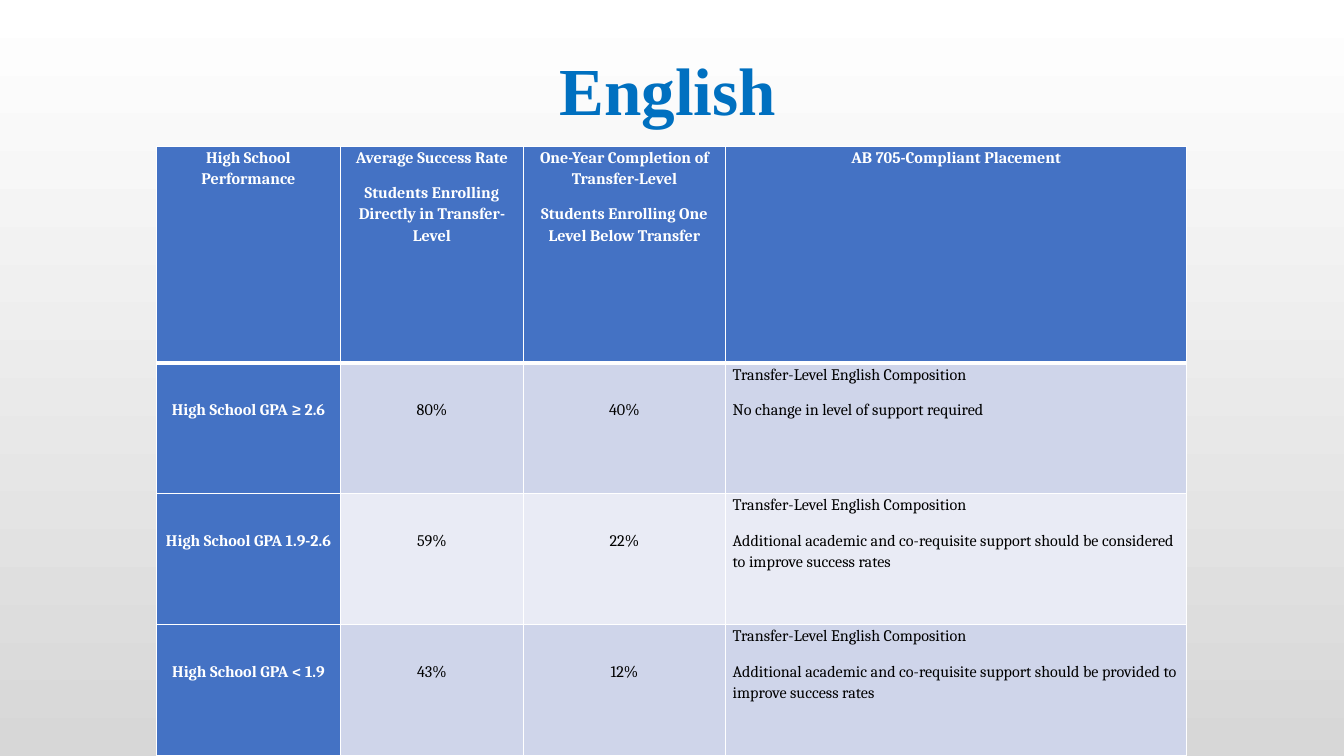
"""Build the English placement slide with its GPA table."""
from dataclasses import dataclass

from lxml.etree import SubElement
from pptx import Presentation
from pptx.dml.color import RGBColor
from pptx.enum.text import MSO_ANCHOR, PP_ALIGN
from pptx.oxml.ns import qn
from pptx.util import Pt

WHITE, BLACK, BLUE = "FFFFFF", "000000", "4472C4"
BANDS = ("CFD5EA", "E9EBF5")
COLUMN_WIDTHS = (131.8, 130.3, 144.7, 329.4)
HEADER_HEIGHT, BAND_HEIGHT = 154.8, 93.5
SIDE_INSET, LOWERED_INSET = 5, 25.5
COMPOSITION = "Transfer-Level English Composition"


@dataclass
class Band:
    performance: str
    direct_success: str
    one_below: str
    support: str


@dataclass
class CellStyle:
    fill: str
    color: str
    bold: bool
    align: PP_ALIGN
    top_inset: float
    top_border: float = 1
    bottom_border: float = 1


HEADINGS = (
    ("High School Performance",),
    ("Average Success Rate", "Students Enrolling Directly in Transfer-Level"),
    ("One-Year Completion of Transfer-Level",
     "Students Enrolling One Level Below Transfer"),
    ("AB 705-Compliant Placement",),
)
GPA_BANDS = (
    Band("High School GPA ≥ 2.6", "80%", "40%",
         "No change in level of support required"),
    Band("High School GPA 1.9-2.6", "59%", "22%",
         "Additional academic and co-requisite support should be considered "
         "to improve success rates"),
    Band("High School GPA < 1.9", "43%", "12%",
         "Additional academic and co-requisite support should be provided "
         "to improve success rates"),
)


def rgb(value: str) -> RGBColor:
    return RGBColor.from_string(value)


def write(paragraph, text: str, face: str, size: float, color: str,
          bold: bool, align: PP_ALIGN) -> None:
    paragraph.alignment = align
    run = paragraph.add_run()
    run.text = text
    run.font.name = face
    run.font.size = Pt(size)
    run.font.bold = bold
    run.font.color.rgb = rgb(color)


def add_borders(cell, top: float, bottom: float) -> None:
    properties = cell._tc.get_or_add_tcPr()
    widths = {"a:lnL": 1, "a:lnR": 1, "a:lnT": top, "a:lnB": bottom}
    for position, (tag, width) in enumerate(widths.items()):
        line = SubElement(properties, qn(tag), w=str(Pt(width)))
        fill = SubElement(line, qn("a:solidFill"))
        SubElement(fill, qn("a:srgbClr"), val=WHITE)
        properties.insert(position, line)


def fill_cell(cell, texts: tuple[str, ...], style: CellStyle) -> None:
    cell.margin_left = cell.margin_right = Pt(SIDE_INSET)
    cell.margin_top, cell.margin_bottom = Pt(style.top_inset), Pt(0)
    cell.fill.solid()
    cell.fill.fore_color.rgb = rgb(style.fill)
    add_borders(cell, style.top_border, style.bottom_border)
    frame = cell.text_frame
    for index, text in enumerate(texts):
        paragraph = frame.add_paragraph() if index else frame.paragraphs[0]
        paragraph.line_spacing = 1.15
        paragraph.space_after = Pt(10)
        write(paragraph, text, "Cambria", 11.5, style.color, style.bold,
              style.align)


def paint_background(slide) -> None:
    fill = slide.background.fill
    fill.gradient()
    fill.gradient_angle = 270
    for stop, color in zip(fill.gradient_stops, (WHITE, "D7D7D7")):
        stop.color.rgb = rgb(color)


def add_title(slide) -> None:
    title = slide.shapes.add_textbox(Pt(66.2), Pt(28.8), Pt(821.5), Pt(75.6))
    frame = title.text_frame
    frame.word_wrap = True
    frame.vertical_anchor = MSO_ANCHOR.MIDDLE
    frame.paragraphs[0].line_spacing = 0.9
    write(frame.paragraphs[0], "English", "Times New Roman", 48, "0070C0",
          True, PP_ALIGN.CENTER)


def add_placement_table(slide) -> None:
    heights = (HEADER_HEIGHT,) + (BAND_HEIGHT,) * len(GPA_BANDS)
    table = slide.shapes.add_table(
        len(heights), len(COLUMN_WIDTHS), Pt(111.6), Pt(104.4),
        Pt(sum(COLUMN_WIDTHS)), Pt(sum(heights))).table
    table.first_row = table.horz_banding = False
    for column, width in zip(table.columns, COLUMN_WIDTHS):
        column.width = Pt(width)
    for row, height in zip(table.rows, heights):
        row.height = Pt(height)

    heading = CellStyle(BLUE, WHITE, True, PP_ALIGN.CENTER, 0, bottom_border=3)
    for column, texts in enumerate(HEADINGS):
        fill_cell(table.cell(0, column), texts, heading)
    for row, band in enumerate(GPA_BANDS, 1):
        shade = BANDS[(row - 1) % 2]
        top = 3 if row == 1 else 1
        label = CellStyle(BLUE, WHITE, True, PP_ALIGN.CENTER, LOWERED_INSET, top)
        rate = CellStyle(shade, BLACK, False, PP_ALIGN.CENTER, LOWERED_INSET, top)
        placement = CellStyle(shade, BLACK, False, PP_ALIGN.LEFT, 0, top)
        fill_cell(table.cell(row, 0), (band.performance,), label)
        fill_cell(table.cell(row, 1), (band.direct_success,), rate)
        fill_cell(table.cell(row, 2), (band.one_below,), rate)
        fill_cell(table.cell(row, 3), (COMPOSITION, band.support), placement)


def main() -> None:
    presentation = Presentation()
    presentation.slide_width, presentation.slide_height = Pt(960), Pt(540)
    slide = presentation.slides.add_slide(presentation.slide_layouts[6])
    paint_background(slide)
    add_title(slide)
    add_placement_table(slide)
    presentation.save("out.pptx")


if __name__ == "__main__":
    main()
